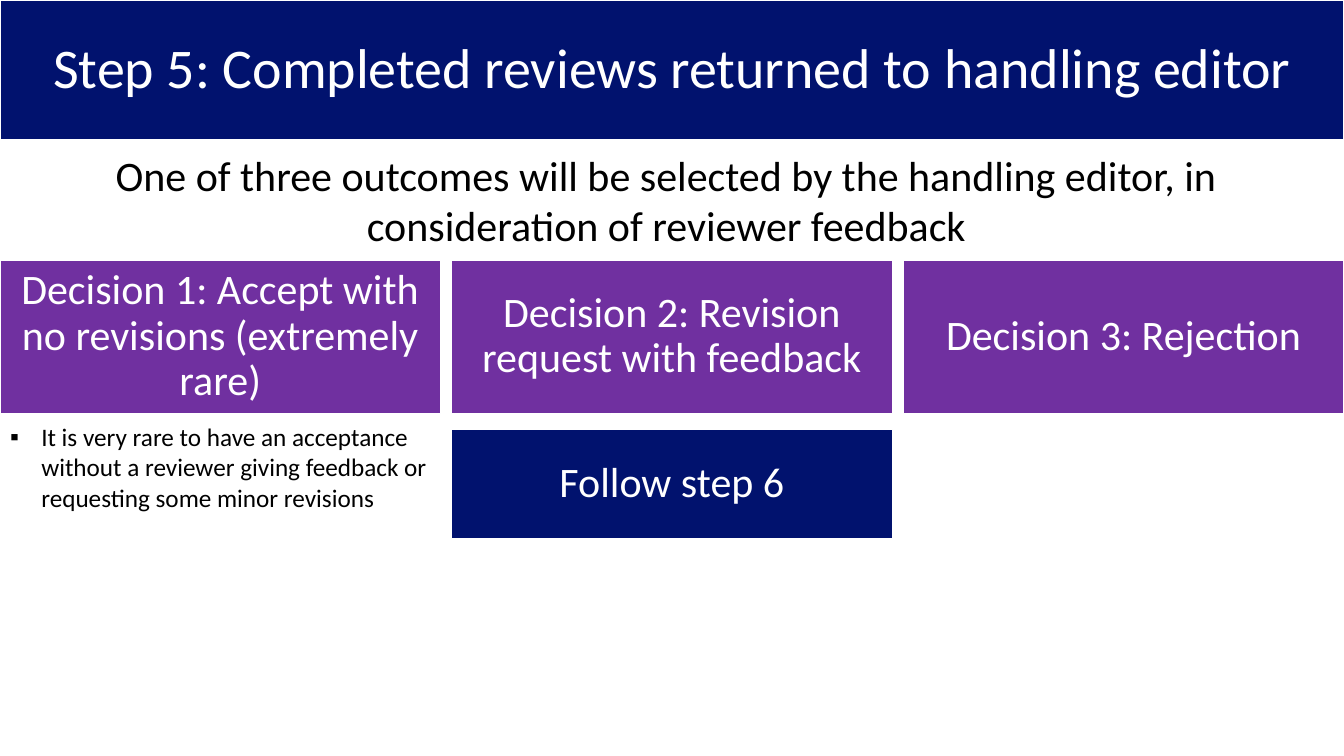
"""Build the slide on the three outcomes of a completed review."""
import dataclasses
import typing

import pptx
import pptx.dml.color
import pptx.enum.shapes
import pptx.enum.text
import pptx.oxml
import pptx.oxml.ns
import pptx.util

Inches = pptx.util.Inches
Pt = pptx.util.Pt
Align = pptx.enum.text.PP_ALIGN
Anchor = pptx.enum.text.MSO_ANCHOR

NAVY, PURPLE, WHITE, BLACK = "01126E", "7030A0", "FFFFFF", "000000"
COLUMN_WIDTH, COLUMN_STEP = 4.37, 4.48
DECISION_TOP, DECISION_HEIGHT = 2.58, 1.52
THIN_INSET, SIDE_INSET, TOP_INSET = 0.01, 0.1, 0.05


@dataclasses.dataclass(frozen=True)
class Block:
    """A piece of text with its place and look."""

    text: str
    left: float
    top: float
    width: float
    height: float
    size: int = 30
    fill: typing.Optional[str] = None
    align: Align = Align.CENTER


def colour(value: str) -> pptx.dml.color.RGBColor:
    """Turn a hex string into a colour."""
    return pptx.dml.color.RGBColor.from_string(value)


def apply(target: typing.Any, values: dict[str, typing.Any]) -> None:
    """Set each format value on the target."""
    for name, value in values.items():
        setattr(target, name, value)


def format_block(shape: typing.Any, block: Block) -> None:
    """Place a shape, paint it and write its text."""
    apply(shape, {
        "left": Inches(block.left),
        "top": Inches(block.top),
        "width": Inches(block.width),
        "height": Inches(block.height),
    })
    if block.fill:
        shape.fill.solid()
        shape.fill.fore_color.rgb = colour(block.fill)
        shape.line.color.rgb = colour(WHITE)
        shape.line.width = Pt(1)
    side, edge = (THIN_INSET, THIN_INSET) if block.fill else (SIDE_INSET, TOP_INSET)
    apply(shape.text_frame, {
        "word_wrap": True,
        "auto_size": pptx.enum.text.MSO_AUTO_SIZE.NONE,
        "vertical_anchor": Anchor.MIDDLE if block.fill else Anchor.TOP,
        "margin_left": Inches(side),
        "margin_right": Inches(side),
        "margin_top": Inches(edge),
        "margin_bottom": Inches(edge),
    })
    para = shape.text_frame.paragraphs[0]
    apply(para, {
        "alignment": block.align,
        "line_spacing": 0.9 if block.fill else 1.0,
        "space_before": Pt(0),
    })
    span = para.add_run()
    span.text = block.text
    apply(span.font, {"name": "Calibri", "size": Pt(block.size)})
    span.font.color.rgb = colour(WHITE if block.fill else BLACK)


def add_box(page: typing.Any, block: Block) -> None:
    """Add a filled rectangle with centred text."""
    box = page.shapes.add_shape(pptx.enum.shapes.MSO_SHAPE.RECTANGLE, 0, 0, 0, 0)
    box.shadow.inherit = False
    format_block(box, block)


def add_bullet(para: typing.Any, mark: str, indent: float) -> None:
    """Give a paragraph a hanging bullet."""
    properties = para._p.get_or_add_pPr()
    properties.set("marL", str(Inches(indent)))
    properties.set("indent", str(-Inches(indent)))
    namespace = pptx.oxml.ns.nsdecls("a")
    for tag in ('buFont {} typeface="Arial"', f'buChar {{}} char="{mark}"'):
        properties.append(pptx.oxml.parse_xml(f"<a:{tag.format(namespace)}/>"))


TITLE = Block("Step 5: Completed reviews returned to handling editor",
              0, 0, 13.33, 1.39, size=40, fill=NAVY)
INTRO = Block("One of three outcomes will be selected by the handling editor, "
              "in consideration of reviewer feedback", 0, 1.43, 13.22, 1.11)
NOTE = Block("It is very rare to have an acceptance without a reviewer giving "
             "feedback or requesting some minor revisions",
             0, 4.13, COLUMN_WIDTH, 1.01, size=18, align=Align.LEFT)
FOLLOW_UP = Block("Follow step 6", COLUMN_STEP, 4.26, COLUMN_WIDTH, 1.08, fill=NAVY)
DECISIONS = (
    "Decision 1: Accept with no revisions (extremely rare)",
    "Decision 2: Revision request with feedback",
    "Decision 3: Rejection",
)


def main() -> None:
    """Build and save the deck."""
    deck = pptx.Presentation()
    apply(deck, {"slide_width": Inches(13.33), "slide_height": Inches(7.5)})
    page = deck.slides.add_slide(deck.slide_layouts[1])
    format_block(page.shapes.title, TITLE)
    for column, text in enumerate(DECISIONS):
        add_box(page, Block(text, column * COLUMN_STEP, DECISION_TOP,
                            COLUMN_WIDTH, DECISION_HEIGHT, fill=PURPLE))
    add_box(page, FOLLOW_UP)
    format_block(page.shapes.add_textbox(0, 0, 0, 0), INTRO)
    note = page.placeholders[1]
    format_block(note, NOTE)
    add_bullet(note.text_frame.paragraphs[0], "▪", 0.31)
    deck.save("out.pptx")


if __name__ == "__main__":
    main()
